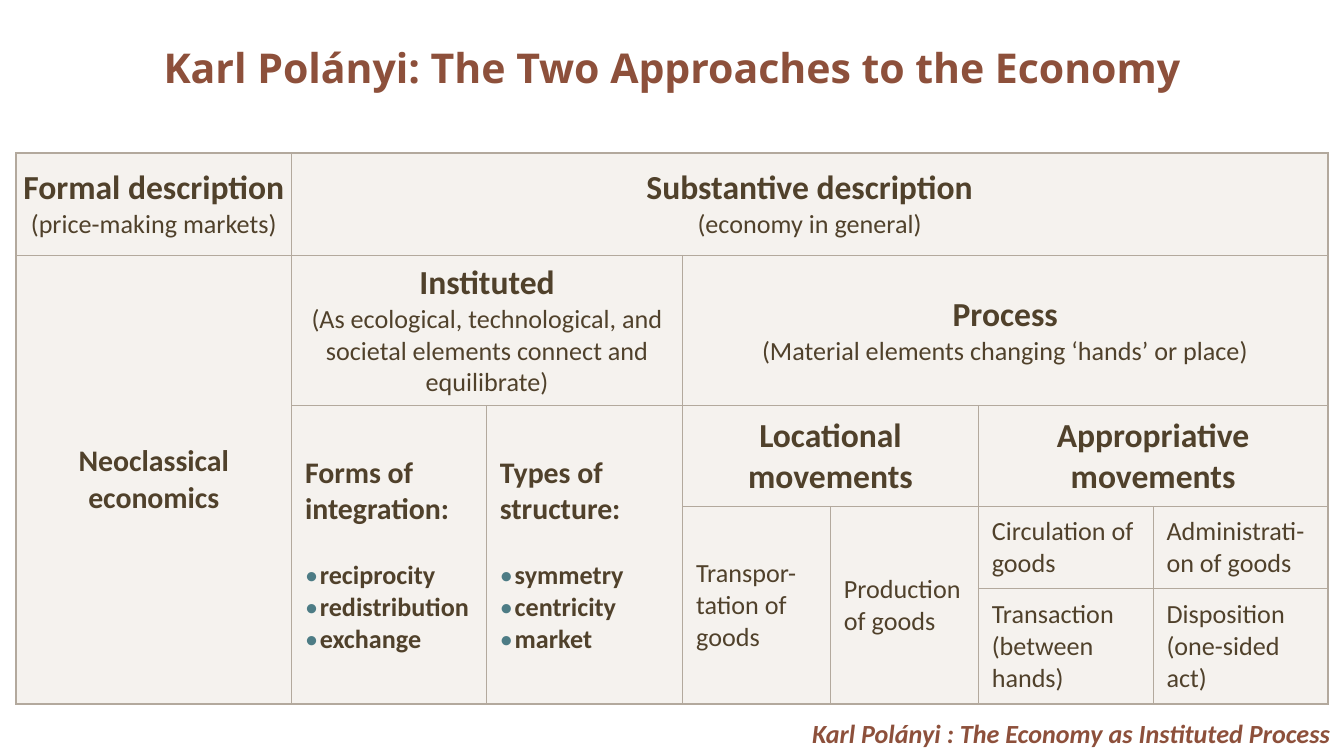
from pptx import Presentation
from pptx.dml.color import RGBColor
from pptx.enum.text import MSO_ANCHOR, PP_ALIGN
from pptx.oxml import parse_xml
from pptx.oxml.ns import nsdecls, qn
from pptx.util import Inches, Pt
from lxml.etree import SubElement

RUST = RGBColor(0x8D, 0x50, 0x3B)
BROWN = RGBColor(0x50, 0x41, 0x2B)
SAND = RGBColor(0xEF, 0xEA, 0xE4)
LINE = RGBColor(0xB3, 0xA9, 0x9D)
TEAL = RGBColor(0x4D, 0x7C, 0x85)
NO_STYLE = "{2D5ABB26-0587-4C30-8999-92F81FD0307C}"


def add_text(p, text, size, bold, color=BROWN, font="Calibri"):
    r = p.add_run()
    r.text = text
    r.font.size = Pt(size)
    r.font.bold = bold
    r.font.name = font
    r.font.color.rgb = color
    return r


def style_cell(cell, widths):
    """Fill the cell at 60 % opacity and draw its four borders."""
    cell.fill.solid()
    cell.fill.fore_color.rgb = SAND
    tcPr = cell._tc.get_or_add_tcPr()
    clr = tcPr.find(qn("a:solidFill")).find(qn("a:srgbClr"))
    SubElement(clr, qn("a:alpha")).set("val", "60000")
    for i, (side, width) in enumerate(zip("LRTB", widths)):
        tcPr.insert(i, parse_xml(
            f'<a:ln{side} {nsdecls("a")} w="{Pt(width)}"><a:solidFill>'
            f'<a:srgbClr val="{LINE}"/></a:solidFill></a:ln{side}>'))


# Widescreen 16:9
prs = Presentation()
prs.slide_width = Inches(10)
prs.slide_height = Inches(10) * 9 // 16
s = prs.slides.add_slide(prs.slide_layouts[5])

# Title
title = s.shapes.title
title.left, title.top = Inches(0.12), Inches(0)
title.width, title.height = Inches(9.76), Inches(1)
tf = title.text_frame
tf.vertical_anchor = MSO_ANCHOR.MIDDLE
p = tf.paragraphs[0]
p.alignment = PP_ALIGN.CENTER
add_text(p, "Karl Polányi: The Two Approaches to the Economy", 22, True, RUST, "Open Sans")

# Table grid
col_widths = [2.05, 1.45, 1.46, 1.1, 1.1, 1.3, 1.3]
row_heights = [0.76, 1.12, 0.75, 0.61, 0.86]
n_rows, n_cols = len(row_heights), len(col_widths)
table = s.shapes.add_table(n_rows, n_cols, Inches(0.12), Inches(1.14),
                           Inches(9.76), Inches(4.1)).table
table.first_row = table.horz_banding = False
table._tbl.tblPr.find(qn("a:tableStyleId")).text = NO_STYLE
for col, w in zip(table.columns, col_widths):
    col.width = Inches(w)
for row, h in zip(table.rows, row_heights):
    row.height = Inches(h)

# Cells: row, column, row span, column span, alignment, (text, size, bold), bullets
C, L = PP_ALIGN.CENTER, PP_ALIGN.LEFT
cells = [
    (0, 0, 1, 1, C, [("Formal description ", 18, True),
                     ("(price-making markets)", 14, False)], []),
    (0, 1, 1, 6, C, [("Substantive description", 18, True),
                     ("(economy in general)", 14, False)], []),
    (1, 0, 4, 1, C, [("Neoclassical economics", 16, True)], []),
    (1, 1, 1, 2, C, [("Instituted", 18, True),
                     ("(As ecological, technological, and societal elements "
                      "connect and equilibrate)", 14, False)], []),
    (1, 3, 1, 4, C, [("Process", 18, True),
                     ("(Material elements changing ‘hands’ or place)", 14, False)], []),
    (2, 1, 3, 1, L, [("Forms of integration:", 16, True)],
     ["reciprocity", "redistribution", "exchange"]),
    (2, 2, 3, 1, L, [("Types of structure:", 16, True)],
     ["symmetry", "centricity", "market"]),
    (2, 3, 1, 2, C, [("Locational movements", 18, True)], []),
    (2, 5, 1, 2, C, [("Appropriative movements", 18, True)], []),
    (3, 3, 2, 1, L, [("Transpor-tation of goods", 14, False)], []),
    (3, 4, 2, 1, L, [("Production of goods", 14, False)], []),
    (3, 5, 1, 1, L, [("Circulation of goods", 14, False)], []),
    (3, 6, 1, 1, L, [("Administrati-on of goods", 14, False)], []),
    (4, 5, 1, 1, L, [("Transaction (between hands)", 14, False)], []),
    (4, 6, 1, 1, L, [("Disposition (one-sided act)", 14, False)], []),
]
for row, col, rows, cols, align, lines, bullets in cells:
    cell = table.cell(row, col)
    if rows * cols > 1:
        cell.merge(table.cell(row + rows - 1, col + cols - 1))
    cell.vertical_anchor = MSO_ANCHOR.MIDDLE
    cell.margin_left = cell.margin_right = Inches(0.05 if row == 0 else 0.1)
    # The outer frame is twice as thick as the inner lines
    outer = (col == 0, col + cols == n_cols, row == 0, row + rows == n_rows)
    style_cell(cell, [1 if edge else 0.5 for edge in outer])

    tf = cell.text_frame
    for i, (text, size, bold) in enumerate(lines):
        p = tf.paragraphs[0] if i == 0 else tf.add_paragraph()
        p.alignment = align
        add_text(p, text, size, bold)
    for i, text in enumerate(bullets):
        p = tf.add_paragraph()
        if i == 0:
            p.space_before = Pt(17)
        pPr = p._p.get_or_add_pPr()
        pPr.set("marL", str(Inches(0.11)))
        pPr.set("indent", str(Inches(-0.11)))
        buClr = SubElement(pPr, qn("a:buClr"))
        SubElement(buClr, qn("a:srgbClr")).set("val", str(TEAL))
        SubElement(pPr, qn("a:buFont")).set("typeface", "Calibri")
        SubElement(pPr, qn("a:buChar")).set("char", "•")
        add_text(p, text, 14, True)

# Source line
tf = s.shapes.add_textbox(Inches(5.89), Inches(5.29), Inches(4.11), Inches(0.34)).text_frame
tf.word_wrap = True
p = tf.paragraphs[0]
p.alignment = PP_ALIGN.RIGHT
r = add_text(p, "Karl Polányi : The Economy as Instituted Process", 14, True, RUST)
r.font.italic = True

prs.save("out.pptx")
